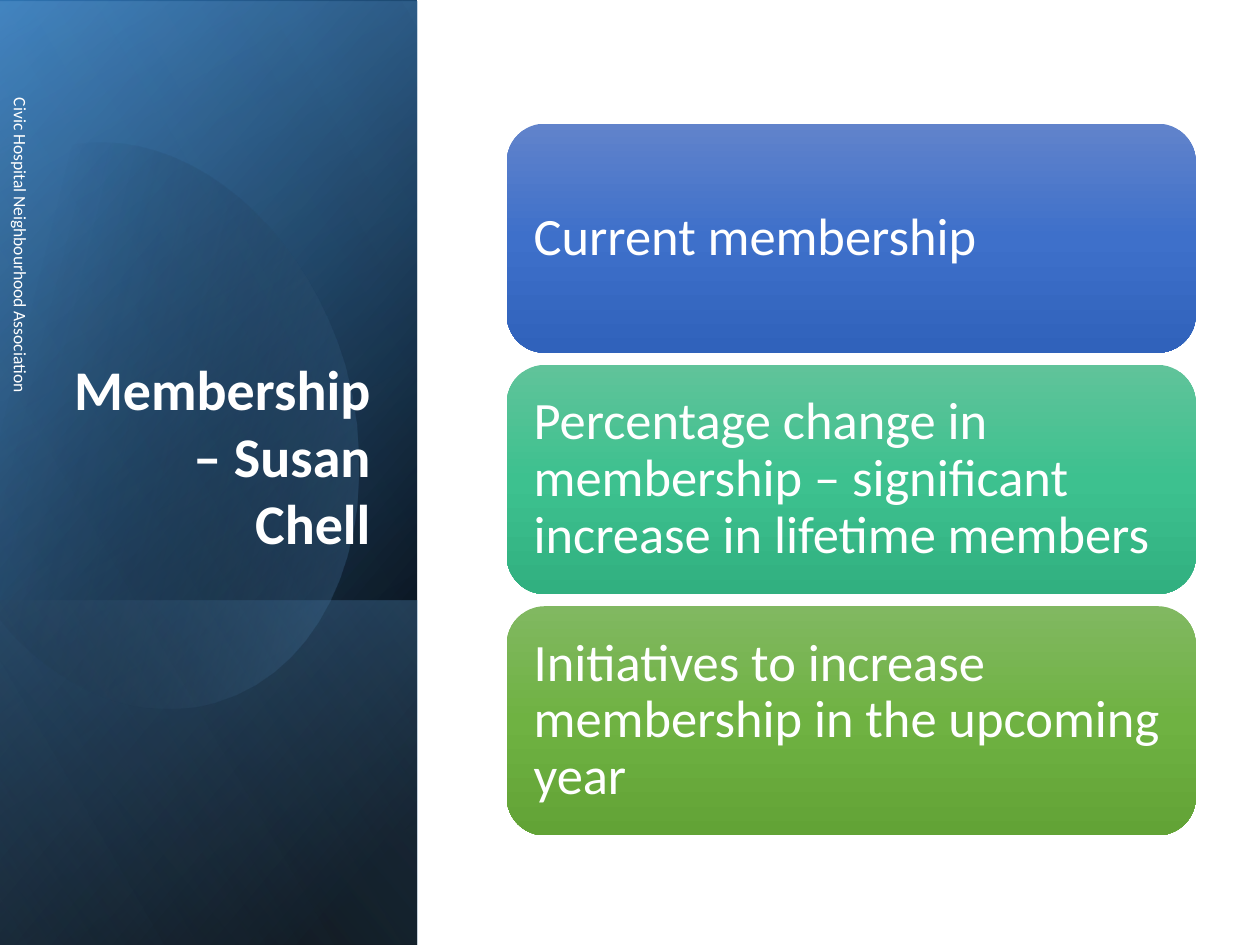
import math

from lxml import etree
from pptx import Presentation
from pptx.dml.color import RGBColor
from pptx.enum.shapes import MSO_SHAPE
from pptx.enum.text import MSO_ANCHOR, PP_ALIGN
from pptx.oxml import parse_xml
from pptx.oxml.ns import nsdecls, qn
from pptx.util import Pt

RECTANGLE, ROUNDED = MSO_SHAPE.RECTANGLE, MSO_SHAPE.ROUNDED_RECTANGLE
MIDDLE, BOTTOM = MSO_ANCHOR.MIDDLE, MSO_ANCHOR.BOTTOM
LEFT, RIGHT = PP_ALIGN.LEFT, PP_ALIGN.RIGHT

COLOURS = {
    "white": "FFFFFF", "black": "000000",
    "deep blue": "2E75B6", "blue": "5B9BD5", "pale blue": "9DC3E6",
    "indigo top": "6183CB", "indigo": "3E70CA", "indigo base": "3062BB",
    "teal top": "60C39A", "teal": "3DC18F", "teal base": "31B080",
    "green top": "81B861", "green": "6FB242", "green base": "62A336",
}
PANEL_WIDTH = 238.3
CARD_TOP, CARD_HEIGHT, CARD_PITCH = 70.6, 131, 137.9

# Left, top, width, height, gradient stops (position, colour, opacity), angle
PANEL_LAYERS = [
    (0, 0, PANEL_WIDTH, 540, [(8, "black", 100), (100, "deep blue", 100)], 50),
    (0, 1, PANEL_WIDTH, 540, [(0, "black", 0), (99, "blue", 46)], 30),
    (0, 343, PANEL_WIDTH, 197, [(2, "blue", 29), (100, "black", 30)], 130),
]
PANEL_SHEEN = (0, 0, PANEL_WIDTH, 540, [(0, "black", 0), (99, "pale blue", 11)], 120)

# Bezier pieces have three points, straight pieces one
OVAL_START = (69, 82)
OVAL_PIECES = [
    [(123, 88), (176, 138), (197, 209)],
    [(221, 297), (189, 382), (123, 401)],
    [(82, 413), (38, 396), (5, 360)],
    [(-2, 351)], [(-18, 120)], [(-11, 111)],
    [(1, 99), (16, 90), (32, 85)],
    [(45, 81), (57, 81), (69, 82)],
]
OVAL_CENTRE = (85.7, 240.8)
OVAL_TILT = -16.1

CARDS = [
    ("Current membership", "indigo"),
    ("Percentage change in membership – significant increase in lifetime members", "teal"),
    ("Initiatives to increase membership in the upcoming year", "green"),
]


def outline_points(start, pieces, steps=16):
    """Flatten straight and Bezier pieces into a list of points."""
    points = [start]
    for piece in pieces:
        if len(piece) == 1:
            points += piece
            continue
        corners = [points[-1], *piece]
        for step in range(1, steps + 1):
            t = step / steps
            weights = [math.comb(3, k) * t**k * (1 - t)**(3 - k) for k in range(4)]
            points.append(tuple(sum(w * corner[axis] for w, corner in zip(weights, corners))
                                for axis in (0, 1)))
    return points


def turn(point, centre, degrees):
    """Rotate a point clockwise about a centre."""
    angle = math.radians(degrees)
    x, y = point[0] - centre[0], point[1] - centre[1]
    return (centre[0] + x * math.cos(angle) - y * math.sin(angle),
            centre[1] + x * math.sin(angle) + y * math.cos(angle))


class SlideBuilder:
    font = "Calibri"

    def __init__(self, page):
        self.page = page

    def paint(self, shape, stops, angle):
        """Give a shape a linear gradient whose stops may be see-through."""
        shape.shadow.inherit = False
        shape.line.fill.background()
        shape.fill.background()
        gradient = parse_xml(f'<a:gradFill {nsdecls("a")} rotWithShape="1"><a:gsLst/>'
                             f'<a:lin ang="{angle * 60000}" scaled="0"/></a:gradFill>')
        for position, colour, opacity in stops:
            stop = etree.SubElement(gradient[0], qn("a:gs"), pos=str(position * 1000))
            tint = etree.SubElement(stop, qn("a:srgbClr"), val=COLOURS[colour])
            if opacity < 100:
                etree.SubElement(tint, qn("a:alpha"), val=str(opacity * 1000))
        properties = shape.element.spPr
        properties.replace(properties.find(qn("a:noFill")), gradient)

    def panel(self, left, top, width, height, stops, angle):
        """Fill an area with a mirrored rectangle turned by a quarter."""
        shift = (width - height) / 2
        shape = self.page.shapes.add_shape(
            RECTANGLE, Pt(left + shift), Pt(top - shift), Pt(height), Pt(width))
        shape.rotation = 90
        shape.element.spPr.find(qn("a:xfrm")).set("flipH", "1")
        self.paint(shape, stops, angle)

    def oval(self, points, centre, tilt, stops, angle):
        upright = [turn(point, centre, -tilt) for point in points]
        first, *rest = [(Pt(x), Pt(y)) for x, y in upright]
        builder = self.page.shapes.build_freeform(*first)
        builder.add_line_segments(rest, close=True)
        shape = builder.convert_to_shape()
        shape.rotation = tilt
        self.paint(shape, stops, angle)

    def set_text(self, shape, text, size, anchor, align, insets, bold=False, spacing=1.0):
        frame = shape.text_frame
        frame.word_wrap = True
        frame.vertical_anchor = anchor
        (frame.margin_left, frame.margin_top,
         frame.margin_right, frame.margin_bottom) = map(Pt, insets)
        para = frame.paragraphs[0]
        para.alignment = align
        para.line_spacing = spacing
        span = para.add_run()
        span.text = text
        span.font.name = self.font
        span.font.size = Pt(size)
        span.font.bold = bold
        span.font.color.rgb = RGBColor.from_string(COLOURS["white"])

    def label(self, left, top, width, height, text, size, anchor, align,
              bold=False, rotation=0):
        box = self.page.shapes.add_textbox(Pt(left), Pt(top), Pt(width), Pt(height))
        box.rotation = rotation
        self.set_text(box, text, size, anchor, align, (7.2, 7.2, 7.2, 3.6), bold)

    def card(self, left, top, width, height, text, hue):
        shape = self.page.shapes.add_shape(ROUNDED, Pt(left), Pt(top), Pt(width), Pt(height))
        self.paint(shape, [(0, f"{hue} top", 100), (50, hue, 100), (100, f"{hue} base", 100)], 90)
        self.set_text(shape, text, 30, MIDDLE, LEFT, (9, 9, 9, 9), spacing=0.9)


def main():
    deck = Presentation()
    deck.slide_width, deck.slide_height = Pt(720), Pt(540)
    slide = SlideBuilder(deck.slides.add_slide(deck.slide_layouts[6]))

    for layer in PANEL_LAYERS:
        slide.panel(*layer)
    slide.oval(outline_points(OVAL_START, OVAL_PIECES), OVAL_CENTRE, OVAL_TILT,
               [(29, "black", 0), (100, "blue", 43)], 30)
    slide.panel(*PANEL_SHEEN)

    slide.label(34.6, 132.5, 184.3, 188.6, "Membership – Susan Chell",
                32, BOTTOM, RIGHT, bold=True)
    slide.label(-108, 156.2, 243.4, 28.8, "Civic Hospital Neighbourhood Association",
                10, MIDDLE, LEFT, rotation=90)

    for row, (text, hue) in enumerate(CARDS):
        slide.card(289.6, CARD_TOP + row * CARD_PITCH, 393.8, CARD_HEIGHT, text, hue)

    deck.save("out.pptx")


if __name__ == "__main__":
    main()
